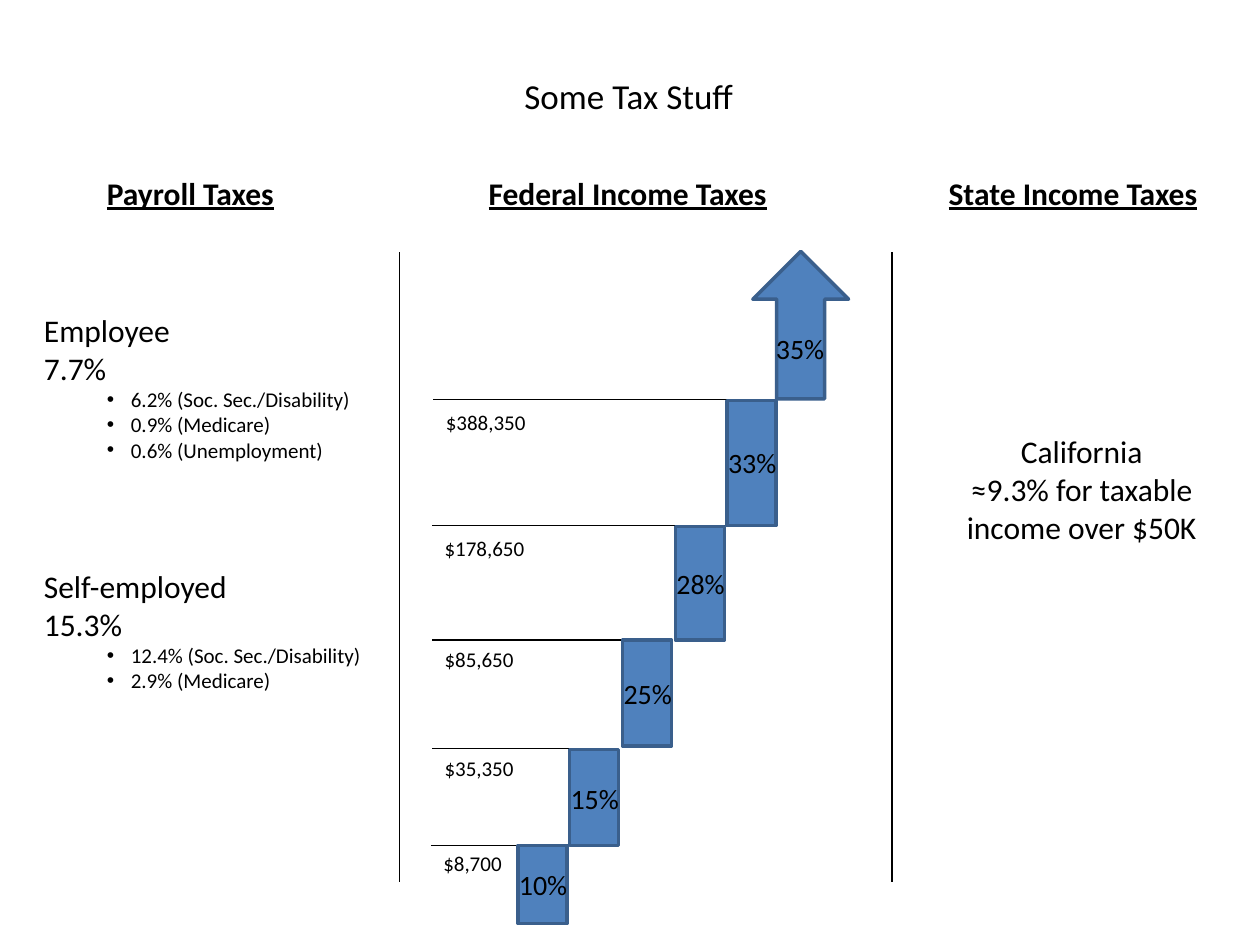
"""Build a slide that compares payroll, federal and state taxes."""
import lxml.etree
import pptx
import pptx.dml.color
import pptx.enum.shapes
import pptx.enum.text
import pptx.oxml.ns
import pptx.util

PX = pptx.util.Inches(0.01)
FONT = "Calibri"
BLACK, BLUE, DARK_BLUE = "000000", "4F81BD", "3A5F8C"
LEFT = pptx.enum.text.PP_ALIGN.LEFT
CENTER = pptx.enum.text.PP_ALIGN.CENTER
SHAPES = pptx.enum.shapes.MSO_SHAPE
BAR_WIDTH = 39
RATE_WIDTH, RATE_HEIGHT = 59, 37


def color(value):
    """Turn a hex string into a colour."""
    return pptx.dml.color.RGBColor.from_string(value)


def add_child(parent, tag, **attributes):
    """Append a drawing element with the given attributes."""
    return lxml.etree.SubElement(parent, pptx.oxml.ns.qn(tag), **attributes)


def write(paragraph, text, size=18, bold=False, underline=False, align=LEFT, bullet=False):
    """Fill a paragraph with formatted text."""
    paragraph.alignment = align
    run = paragraph.add_run()
    run.text = text
    run.font.name = FONT
    run.font.size = pptx.util.Pt(size)
    run.font.bold = bold
    run.font.underline = underline
    run.font.color.rgb = color(BLACK)
    if bullet:
        paragraph.level = 1
        properties = paragraph._p.get_or_add_pPr()
        properties.set("marL", str(69 * PX))
        properties.set("indent", str(-19 * PX))
        add_child(properties, "a:buFont", typeface="Arial")
        add_child(properties, "a:buChar", char="•")


def add_text(slide, box, lines, wrap=False, **style):
    """Add a text box; each line is a text with its own format."""
    shape = slide.shapes.add_textbox(*(value * PX for value in box))
    frame = shape.text_frame
    frame.word_wrap = wrap
    frame.auto_size = pptx.enum.text.MSO_AUTO_SIZE.SHAPE_TO_FIT_TEXT
    for index, (text, line_style) in enumerate(lines):
        paragraph = frame.add_paragraph() if index else frame.paragraphs[0]
        write(paragraph, text, **{**style, **line_style})


def add_line(slide, *ends):
    """Add a thin black line between two points."""
    connector = slide.shapes.add_connector(
        pptx.enum.shapes.MSO_CONNECTOR.STRAIGHT, *(value * PX for value in ends))
    connector.line.color.rgb = color(BLACK)
    connector.line.width = pptx.util.Pt(0.75)
    add_child(connector._element.spPr, "a:effectLst")


def add_block(slide, kind, *box):
    """Add a blue outlined shape."""
    shape = slide.shapes.add_shape(kind, *(value * PX for value in box))
    shape.shadow.inherit = False
    shape.fill.solid()
    shape.fill.fore_color.rgb = color(BLUE)
    shape.line.color.rgb = color(DARK_BLUE)
    shape.line.width = pptx.util.Pt(2)
    return shape


def add_rate(slide, center, middle, rate):
    """Add a tax rate centred on a point."""
    box = (center - RATE_WIDTH // 2, middle - RATE_HEIGHT // 2, RATE_WIDTH, RATE_HEIGHT)
    add_text(slide, box, [(rate, {})], size=16)


def add_title(slide, box, text):
    """Place and format the title placeholder."""
    title = slide.shapes.title
    title.left, title.top, title.width, title.height = (value * PX for value in box)
    title.text_frame.vertical_anchor = pptx.enum.text.MSO_ANCHOR.MIDDLE
    write(title.text_frame.paragraphs[0], text, size=20, align=CENTER)


def add_heading(slide, left, width, text):
    """Add an underlined column heading."""
    add_text(slide, (left, 133, width, 40), [(text, {})], bold=True, underline=True)


def add_payroll(slide, box, worker, total, parts):
    """Add a payroll rate with its bulleted parts."""
    bullets = [(part, {"size": 12, "bullet": True}) for part in parts]
    add_text(slide, box, [(worker, {}), (total, {}), *bullets])


def add_brackets(slide, left, top):
    """Add the staircase of federal brackets, topped by an arrow."""
    brackets = [
        ("10%", 69, 471, 62, "$8,700", 0, 67, 471, 69, 470),
        ("15%", 110, 395, 76, "$35,350", 1, 76, 394, 110, 395),
        ("25%", 152, 308, 84, "$85,650", 1, 76, 308, 184, 308),
        ("28%", 194, 218, 90, "$178,650", 1, 85, 217, 235, 220),
        ("33%", 235, 118, 99, "$388,350", 2, 85, 117, 235, 120),
    ]
    for rate, x, y, height, limit, start, width, line_y, line_end, label_y in brackets:
        add_line(slide, left + start, top + line_y, left + line_end, top + line_y)
        add_block(slide, SHAPES.RECTANGLE, left + x, top + y, BAR_WIDTH, height)
        add_text(slide, (left + start, top + label_y, width, 30), [(limit, {})], size=12)
        add_rate(slide, left + x + BAR_WIDTH // 2 + 1, top + y + height // 2, rate)
    arrow = add_block(slide, SHAPES.RIGHT_ARROW, left + 235, top + 20, 117, 76)
    arrow.rotation = 270
    add_rate(slide, left + 293, top + 76, "35%")


def main():
    """Build and save the slide."""
    presentation = pptx.Presentation()
    presentation.slide_width = 1000 * PX
    presentation.slide_height = 750 * PX
    slide = presentation.slides.add_slide(presentation.slide_layouts[5])
    add_title(slide, (74, 17, 850, 117), "Some Tax Stuff")
    for x in (317, 708):
        add_line(slide, x, 200, x, 700)
    add_heading(slide, 75, 154, "Payroll Taxes")
    add_heading(slide, 378, 242, "Federal Income Taxes")
    add_heading(slide, 743, 219, "State Income Taxes")
    add_payroll(slide, (25, 242, 265, 131), "Employee", "7.7%", [
        "6.2% (Soc. Sec./Disability)", "0.9% (Medicare)", "0.6% (Unemployment)"])
    add_payroll(slide, (25, 445, 274, 111), "Self-employed", "15.3%", [
        "12.4% (Soc. Sec./Disability)", "2.9% (Medicare)"])
    add_brackets(slide, 342, 200)
    add_text(slide, (746, 338, 225, 101), [
        ("California", {}), ("≈9.3% for taxable income over $50K", {})],
        wrap=True, align=CENTER)
    presentation.save("out.pptx")


if __name__ == "__main__":
    main()
